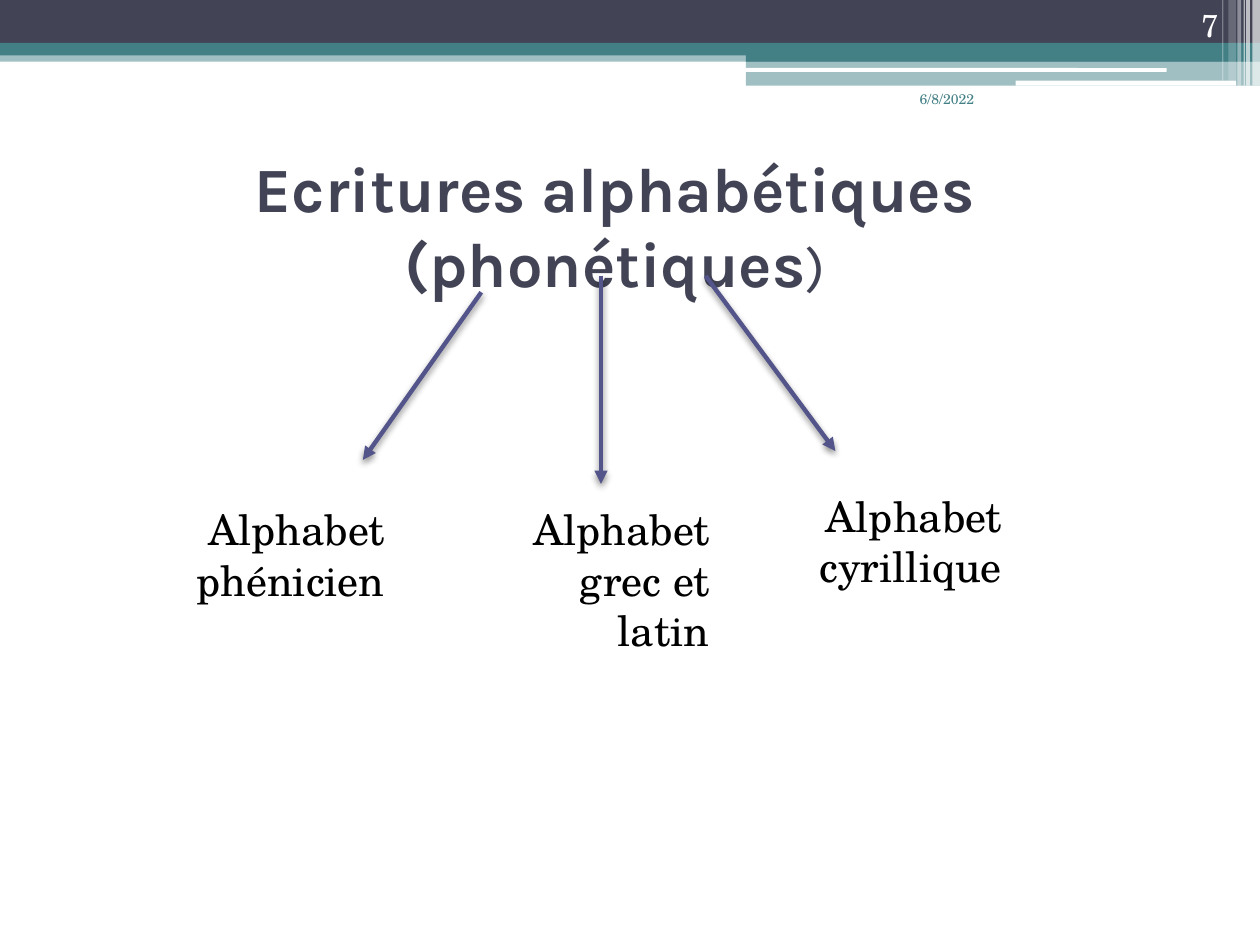
from lxml.etree import SubElement
from pptx import Presentation
from pptx.dml.color import RGBColor
from pptx.enum.shapes import MSO_CONNECTOR, MSO_SHAPE
from pptx.enum.text import MSO_ANCHOR, MSO_AUTO_SIZE, PP_ALIGN
from pptx.oxml.ns import qn
from pptx.util import Inches, Pt

NAVY = RGBColor(0x42, 0x44, 0x56)
TEAL = RGBColor(0x43, 0x80, 0x86)
VIOLET = RGBColor(0x53, 0x54, 0x8A)
WHITE = RGBColor(0xFF, 0xFF, 0xFF)
BLACK = RGBColor(0, 0, 0)

HEADING_FONT = "Karla"
BODY_FONT = "TeX Gyre Schola"
COLUMNS, ROWS = 100, 75


class SlideBuilder:
    """Places elements on a grid of COLUMNS by ROWS square cells."""

    def __init__(self, deck):
        self.cell_width = deck.slide_width / COLUMNS
        self.cell_height = deck.slide_height / ROWS
        self.page = deck.slides.add_slide(deck.slide_layouts[5])
        self.shapes = self.page.shapes

    def place(self, *cells):
        """Turn alternating columns and rows into slide lengths."""
        sizes = (self.cell_width, self.cell_height) * 2
        return [round(cell * size) for cell, size in zip(cells, sizes)]

    def band(self, cells, color, opacity=100, rounded=False):
        kind = MSO_SHAPE.ROUNDED_RECTANGLE if rounded else MSO_SHAPE.RECTANGLE
        band = self.shapes.add_shape(kind, *self.place(*cells))
        band.shadow.inherit = False
        band.line.fill.background()
        band.fill.solid()
        band.fill.fore_color.rgb = color
        if opacity < 100:
            tint = band.fill._xPr.find(qn("a:solidFill"))[0]
            SubElement(tint, qn("a:alpha"), val=str(opacity * 1000))

    def span(self, para, words, color, **font):
        span = para.add_run()
        span.text = words
        span.font.color.rgb = color
        for name, value in font.items():
            setattr(span.font, name, value)

    def title(self, cells, lines, closing):
        title = self.shapes.title
        self.shapes._spTree.append(title._element)
        title.left, title.top, title.width, title.height = self.place(*cells)
        frame = title.text_frame
        frame.auto_size = MSO_AUTO_SIZE.NONE
        frame.vertical_anchor = MSO_ANCHOR.MIDDLE
        para = frame.paragraphs[0]
        para.alignment = PP_ALIGN.CENTER
        for number, line in enumerate(lines):
            if number:
                para.add_line_break()
            self.span(para, line, NAVY, name=HEADING_FONT, size=Pt(36), bold=True)
        self.span(para, closing, NAVY, name=HEADING_FONT, size=Pt(32), bold=False)

    def text(self, cells, lines, size, color=BLACK, align=PP_ALIGN.RIGHT,
             anchor=MSO_ANCHOR.TOP):
        frame = self.shapes.add_textbox(*self.place(*cells)).text_frame
        frame.word_wrap = True
        frame.vertical_anchor = anchor
        for number, line in enumerate(lines):
            para = frame.add_paragraph() if number else frame.paragraphs[0]
            para.alignment = align
            self.span(para, line, color, name=BODY_FONT, size=Pt(size))

    def arrow(self, *cells):
        arrow = self.shapes.add_connector(MSO_CONNECTOR.STRAIGHT, *self.place(*cells))
        arrow.line.color.rgb = VIOLET
        arrow.line.width = Pt(2.5)
        SubElement(arrow.line._get_or_add_ln(), qn("a:tailEnd"), type="triangle")
        effects = SubElement(arrow._element.spPr, qn("a:effectLst"))
        shadow = SubElement(effects, qn("a:outerShdw"), blurRad=str(Pt(4)),
                            dist=str(Pt(2)), dir="5400000", rotWithShape="0")
        tint = SubElement(shadow, qn("a:srgbClr"), val=str(BLACK))
        SubElement(tint, qn("a:alpha"), val="45000")


def main():
    deck = Presentation()
    deck.slide_width, deck.slide_height = Inches(10), Inches(7.5)
    slide = SlideBuilder(deck)

    slide.band((0, 4, 100, 0.9), TEAL, 50)
    slide.band((0, 0, 100, 3.4), NAVY)
    slide.band((0, 3.4, 100, 1), TEAL)
    slide.band((59.2, 3.9, 40.8, 1), TEAL)
    slide.band((59.2, 4.8, 40.8, 2), TEAL, 50)
    slide.band((59.1, 5.4, 33.5, 0.3), WHITE, rounded=True)
    slide.band((80.6, 6.4, 17.5, 0.4), WHITE, rounded=True)

    stripes = [(99.4, 0.6, 6.8, 65), (98.9, 0.3, 6.8, 65), (98.7, 0.1, 6.8, 60),
               (98.2, 0.3, 6.8, 40), (97.5, 0.6, 6.4, 20), (97, 0.1, 6.4, 30)]
    for left, width, height, opacity in stripes:
        slide.band((left, 0, width, height), WHITE, opacity)

    slide.title((4, 10.6, 89.6, 14.5),
                ["Ecritures alphabétiques", "(phonétiques"], ")")
    slide.text((72, 6.7, 10.5, 5), ["6/8/2022"], 8, TEAL, PP_ALIGN.LEFT)
    slide.text((89.4, 0, 8.3, 4), ["7"], 18, WHITE, anchor=MSO_ANCHOR.BOTTOM)

    slide.arrow(47.7, 21.9, 47.7, 38.4)
    slide.arrow(56, 21.9, 66.3, 35.8)
    slide.arrow(38.2, 23.2, 28.8, 36.5)

    slide.text((11.6, 39.5, 19.9, 9.1), ["Alphabet phénicien"], 24)
    slide.text((39.9, 39.5, 17.4, 13.1), ["Alphabet", "grec et latin"], 24)
    slide.text((64, 38.4, 16.5, 9.1), ["Alphabet cyrillique"], 24)

    deck.save("out.pptx")


if __name__ == "__main__":
    main()
